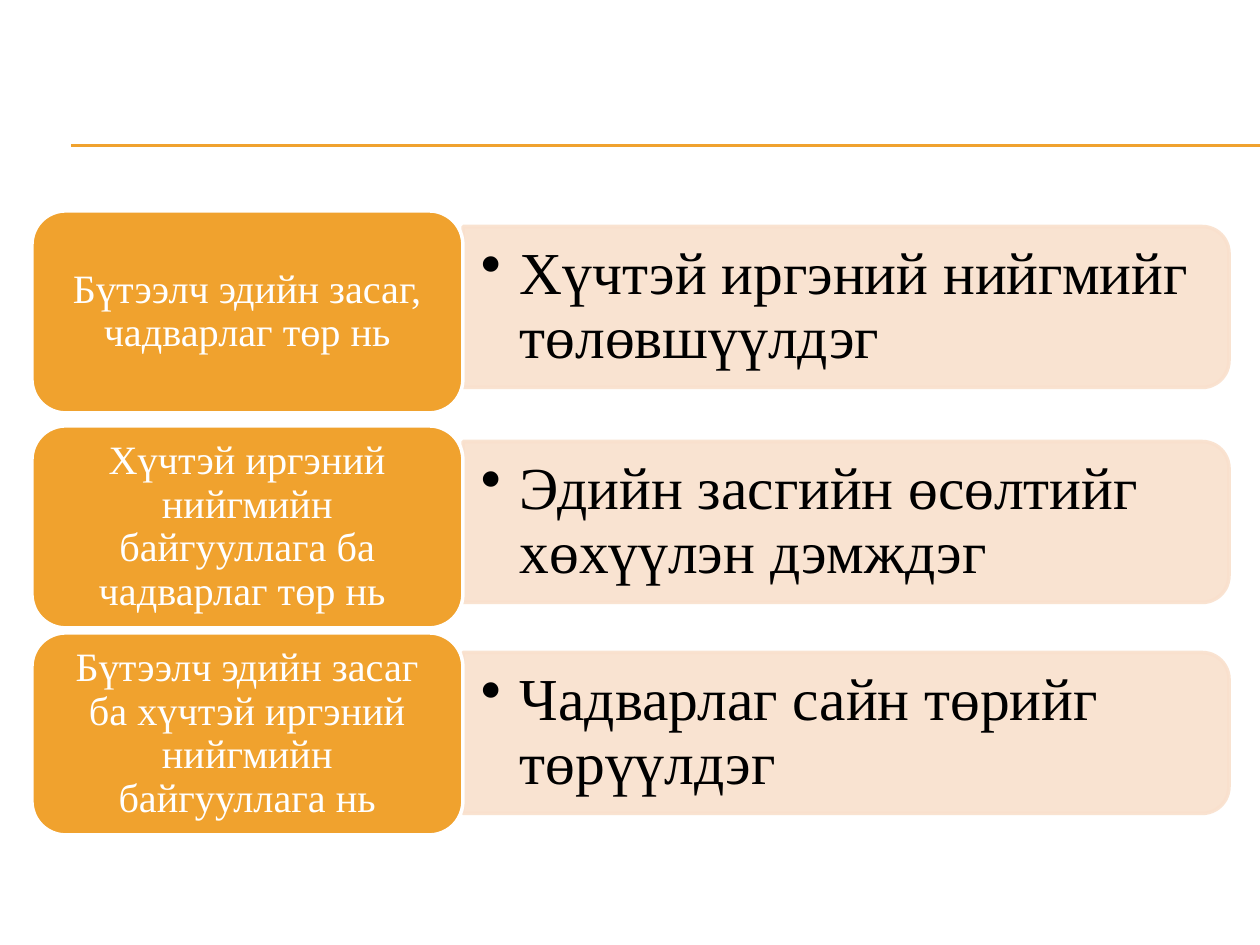
from lxml.etree import SubElement
from pptx import Presentation
from pptx.dml.color import RGBColor
from pptx.enum.shapes import MSO_CONNECTOR, MSO_SHAPE
from pptx.enum.text import MSO_ANCHOR, PP_ALIGN
from pptx.oxml.ns import qn
from pptx.util import Emu, Pt

PX = 914400 // 126
FONT = "Times New Roman"
ORANGE, PEACH, WHITE, BLACK = "F0A22E", "F9E0CD", "FFFFFF", "000000"

ROWS = [
    (211, 307, "Бүтээлч эдийн засаг, чадварлаг төр нь",
     "Хүчтэй иргэний нийгмийг төлөвшүүлдэг"),
    (426, 522, "Хүчтэй иргэний нийгмийн байгууллага ба чадварлаг төр нь ",
     "Эдийн засгийн өсөлтийг хөхүүлэн дэмждэг"),
    (633, 733, "Бүтээлч эдийн засаг ба хүчтэй иргэний нийгмийн байгууллага нь",
     "Чадварлаг сайн төрийг төрүүлдэг"),
]
RULE_LEFT, RULE_TOPS = 71, (145, 146)
LABEL_LEFT, LABEL_WIDTH, LABEL_HEIGHT = 32, 431, 202
PANEL_LEFT, PANEL_WIDTH, PANEL_HEIGHT = 463, 766, 161
TEXT_WIDTH, TEXT_HEIGHT = 758, 145
BULLET_INDENT = 39


def px(value):
    return Emu(round(value * PX))


def color(value):
    return RGBColor.from_string(value)


def add_rule(slide, top):
    rule = slide.shapes.add_connector(
        MSO_CONNECTOR.STRAIGHT, px(RULE_LEFT), px(top), px(1260), px(top))
    rule.line.color.rgb = color(ORANGE)
    rule.line.width = Pt(0.75)
    SubElement(rule.element.spPr, qn("a:effectLst"))


def add_box(slide, kind, left, top, width, height, fill, line):
    shape = slide.shapes.add_shape(kind, px(left), px(top), px(width), px(height))
    shape.shadow.inherit = False
    shape.fill.solid()
    shape.fill.fore_color.rgb = color(fill)
    shape.line.color.rgb = color(line)
    shape.line.width = Pt(2)
    return shape


def write(shape, text, size, text_color, alignment, side, edge):
    frame = shape.text_frame
    frame.word_wrap = True
    frame.vertical_anchor = MSO_ANCHOR.MIDDLE
    frame.margin_left = frame.margin_right = px(side)
    frame.margin_top = frame.margin_bottom = px(edge)
    paragraph = frame.paragraphs[0]
    paragraph.text = text
    paragraph.alignment = alignment
    paragraph.line_spacing = 0.9
    paragraph.font.name = FONT
    paragraph.font.size = Pt(size)
    paragraph.font.color.rgb = color(text_color)
    return paragraph


def add_panel(slide, middle, text):
    center = PANEL_LEFT + PANEL_WIDTH / 2
    panel = add_box(slide, MSO_SHAPE.ROUND_2_SAME_RECTANGLE,
                    center - PANEL_HEIGHT / 2, middle - PANEL_WIDTH / 2,
                    PANEL_HEIGHT, PANEL_WIDTH, PEACH, PEACH)
    panel.rotation = 90
    for fill_color in panel.element.spPr.iter(qn("a:srgbClr")):
        SubElement(fill_color, qn("a:alpha"), val="90000")
    box = slide.shapes.add_textbox(px(PANEL_LEFT), px(middle - TEXT_HEIGHT / 2),
                                   px(TEXT_WIDTH), px(TEXT_HEIGHT))
    paragraph = write(box, text, 34, BLACK, PP_ALIGN.LEFT, 18, 9)
    properties = paragraph._p.get_or_add_pPr()
    properties.set("marL", str(px(BULLET_INDENT)))
    properties.set("indent", str(-px(BULLET_INDENT)))
    SubElement(properties, qn("a:buChar"), char="•")
    properties.append(properties.find(qn("a:defRPr")))


def add_label(slide, top, text):
    label = add_box(slide, MSO_SHAPE.ROUNDED_RECTANGLE, LABEL_LEFT, top,
                    LABEL_WIDTH, LABEL_HEIGHT, ORANGE, WHITE)
    write(label, text, 23, WHITE, PP_ALIGN.CENTER, 23, 16)


def main():
    presentation = Presentation()
    presentation.slide_width = px(1260)
    presentation.slide_height = px(945)
    slide = presentation.slides.add_slide(presentation.slide_layouts[6])
    for top in RULE_TOPS:
        add_rule(slide, top)
    for label_top, panel_middle, label, result in ROWS:
        add_panel(slide, panel_middle, result)
        add_label(slide, label_top, label)
    presentation.save("out.pptx")


if __name__ == "__main__":
    main()
